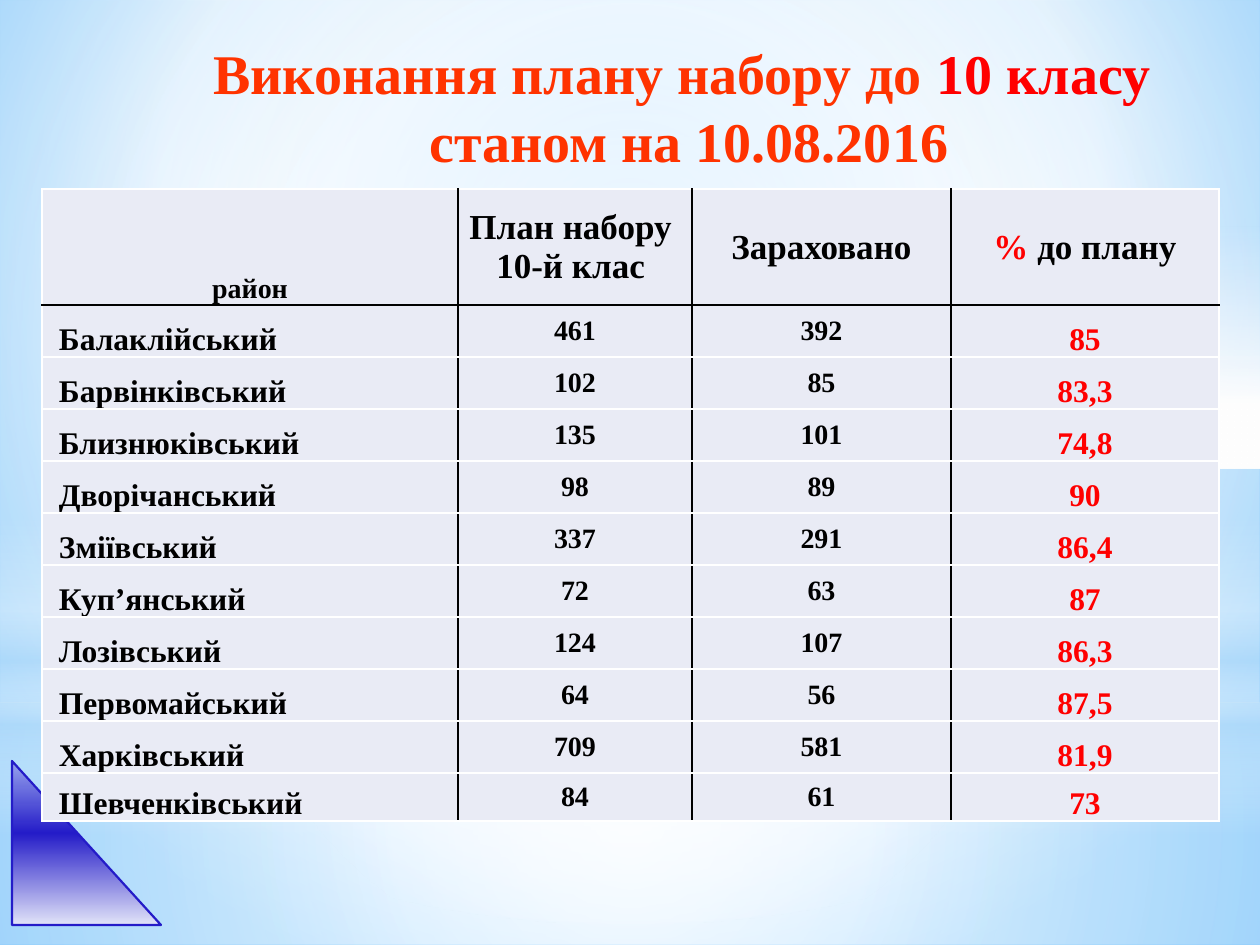
from lxml import etree
from pptx import Presentation
from pptx.dml.color import RGBColor
from pptx.enum.shapes import MSO_SHAPE
from pptx.enum.text import MSO_ANCHOR, PP_ALIGN
from pptx.oxml.ns import qn
from pptx.util import Pt

RECT, OVAL, TRIANGLE = MSO_SHAPE.RECTANGLE, MSO_SHAPE.OVAL, MSO_SHAPE.RIGHT_TRIANGLE
MIDDLE, BOTTOM = MSO_ANCHOR.MIDDLE, MSO_ANCHOR.BOTTOM
LEFT, CENTER = PP_ALIGN.LEFT, PP_ALIGN.CENTER

BLACK, WHITE, RED, ORANGE = "000000", "FFFFFF", "FF0000", "FF3300"
CELL, SKY, INDIGO = "E9EBF5", "B4DCFA", "241CC8"
MIDPOINT = (50, 50, 50, 50)

DISTRICTS = [
    ("Балаклійський", "461", "392", "85"),
    ("Барвінківський", "102", "85", "83,3"),
    ("Близнюківський", "135", "101", "74,8"),
    ("Дворічанський", "98", "89", "90"),
    ("Зміївський", "337", "291", "86,4"),
    ("Куп’янський", "72", "63", "87"),
    ("Лозівський", "124", "107", "86,3"),
    ("Первомайський", "64", "56", "87,5"),
    ("Харківський", "709", "581", "81,9"),
    ("Шевченківський", "84", "61", "73"),
]


def px(n):
    return round(n * 914400 / 126)


def rgb(value):
    return RGBColor.from_string(value)


def write(p, text, size=16, color=BLACK, align=CENTER, font="Times New Roman"):
    p.alignment = align
    r = p.add_run()
    r.text = text
    r.font.name, r.font.size, r.font.bold = font, Pt(size), True
    r.font.color.rgb = rgb(color)


def child(parent, tag, **attrs):
    return etree.SubElement(parent, qn(tag), {k: str(v) for k, v in attrs.items()})


def gradient(fill, element, stops, center=None):
    fill.gradient()
    grad = next(element.iter(qn("a:gradFill")))
    for old in list(grad):
        grad.remove(old)
    stop_list = child(grad, "a:gsLst")
    for pos, color, *alpha in stops:
        clr = child(child(stop_list, "a:gs", pos=pos * 1000), "a:srgbClr", val=color)
        for a in alpha:
            child(clr, "a:alpha", val=a * 1000)
    if center:
        sides = {k: v * 1000 for k, v in zip("ltrb", center)}
        child(child(grad, "a:path", path="circle"), "a:fillToRect", **sides)
    else:
        child(grad, "a:lin", ang=5400000, scaled=0)


class Deck:
    def __init__(self, width, height):
        self.prs = Presentation()
        self.prs.slide_width, self.prs.slide_height = px(width), px(height)
        self.s = self.prs.slides.add_slide(self.prs.slide_layouts[5])

    def background(self, stops, center):
        gradient(self.s.background.fill, self.s._element, stops, center)

    def shape(self, kind, box, stops, center=None, line=None):
        sp = self.s.shapes.add_shape(kind, *map(px, box))
        sp.shadow.inherit = False
        gradient(sp.fill, sp._element, stops, center)
        if line:
            sp.line.color.rgb, sp.line.width = rgb(line), Pt(1.25)
        else:
            sp.line.fill.background()

    def title(self, box, lines):
        sp = self.s.shapes.title
        sp._element.getparent().append(sp._element)
        sp.left, sp.top, sp.width, sp.height = map(px, box)
        tf = sp.text_frame
        tf.word_wrap, tf.vertical_anchor = True, MIDDLE
        p = tf.paragraphs[0]
        for i, runs in enumerate(lines):
            if i:
                p.add_line_break()
            for text, color in runs:
                write(p, text, size=32, color=color)

    def table(self, left, top, widths, heights):
        frame = self.s.shapes.add_table(
            len(heights), len(widths), px(left), px(top), px(sum(widths)), px(sum(heights)))
        tbl = frame.table
        tbl.first_row = tbl.horz_banding = False
        for col, w in zip(tbl.columns, widths):
            col.width = px(w)
        for row, h in zip(tbl.rows, heights):
            row.height = px(h)
        return tbl

    def cell(self, tbl, row, col, paragraphs, anchor=MIDDLE, indent=1, **fmt):
        cell = tbl.cell(row, col)
        cell.fill.solid()
        cell.fill.fore_color.rgb = rgb(CELL)
        cell.vertical_anchor = anchor
        cell.margin_left, cell.margin_right = px(indent), px(1)
        cell.margin_top, cell.margin_bottom = px(1), 0
        tf = cell.text_frame
        for i, runs in enumerate(paragraphs):
            p = tf.add_paragraph() if i else tf.paragraphs[0]
            for text, color in runs:
                write(p, text, color=color, **fmt)
        dark = {"L": col > 0, "R": col < len(tbl.columns) - 1, "T": row == 1, "B": row == 0}
        tc_pr = cell._tc.get_or_add_tcPr()
        for i, (side, is_dark) in enumerate(dark.items()):
            ln = child(tc_pr, f"a:ln{side}", w=Pt(1))
            child(child(ln, "a:solidFill"), "a:srgbClr", val=BLACK if is_dark else WHITE)
            tc_pr.insert(i, ln)


def main():
    deck = Deck(1260, 945)
    deck.background([(0, "9ED5FF"), (60, WHITE), (100, "5BB9FF")], (20, 10, 20, 60))
    deck.shape(RECT, (0, 703, 1260, 242),
               [(0, WHITE, 91), (37, WHITE, 76), (100, SKY, 79)], MIDPOINT)
    deck.shape(RECT, (0, 0, 1260, 703),
               [(0, WHITE, 89), (48, WHITE, 62), (100, SKY, 79)], MIDPOINT)
    deck.shape(RECT, (0, 519, 1260, 315),
               [(0, WHITE, 0), (29, WHITE, 30), (45, SKY, 40),
                (55, WHITE, 26), (65, SKY, 60), (100, WHITE, 0)])
    deck.shape(OVAL, (0, 221, 1260, 703), [(0, WHITE), (56, WHITE, 0)], MIDPOINT)
    deck.shape(RECT, (1056, 227, 204, 242), [(0, "F6F7FC", 0), (74, WHITE), (100, WHITE)])

    deck.title((118, 38, 1142, 136), [
        [("Виконання плану набору до ", ORANGE), ("10 класу ", RED)],
        [("станом на 10.08.2016", ORANGE)],
    ])
    deck.shape(TRIANGLE, (12, 761, 149, 164),
               [(0, "98A4ED"), (44, INDIGO), (100, "E1E3F8")], line=INDIGO)

    tbl = deck.table(42, 189, [416, 234, 259, 268], [116] + [52] * 9 + [48])
    deck.cell(tbl, 0, 0, [[("район", BLACK)]], anchor=BOTTOM)
    headings = [
        [[("План набору ", BLACK)], [("10-й клас ", BLACK)]],
        [[("Зараховано", BLACK)]],
        [[("%", RED), (" до плану", BLACK)]],
    ]
    for col, heading in enumerate(headings, 1):
        deck.cell(tbl, 0, col, heading, size=20)
    for row, (name, plan, enrolled, percent) in enumerate(DISTRICTS, 1):
        deck.cell(tbl, row, 0, [[(name, BLACK)]], anchor=BOTTOM, indent=17, size=18, align=LEFT)
        deck.cell(tbl, row, 1, [[(plan, BLACK)]])
        deck.cell(tbl, row, 2, [[(enrolled, BLACK)]])
        deck.cell(tbl, row, 3, [[(percent, RED)]], anchor=BOTTOM, size=18)
    deck.prs.save("out.pptx")


if __name__ == "__main__":
    main()
